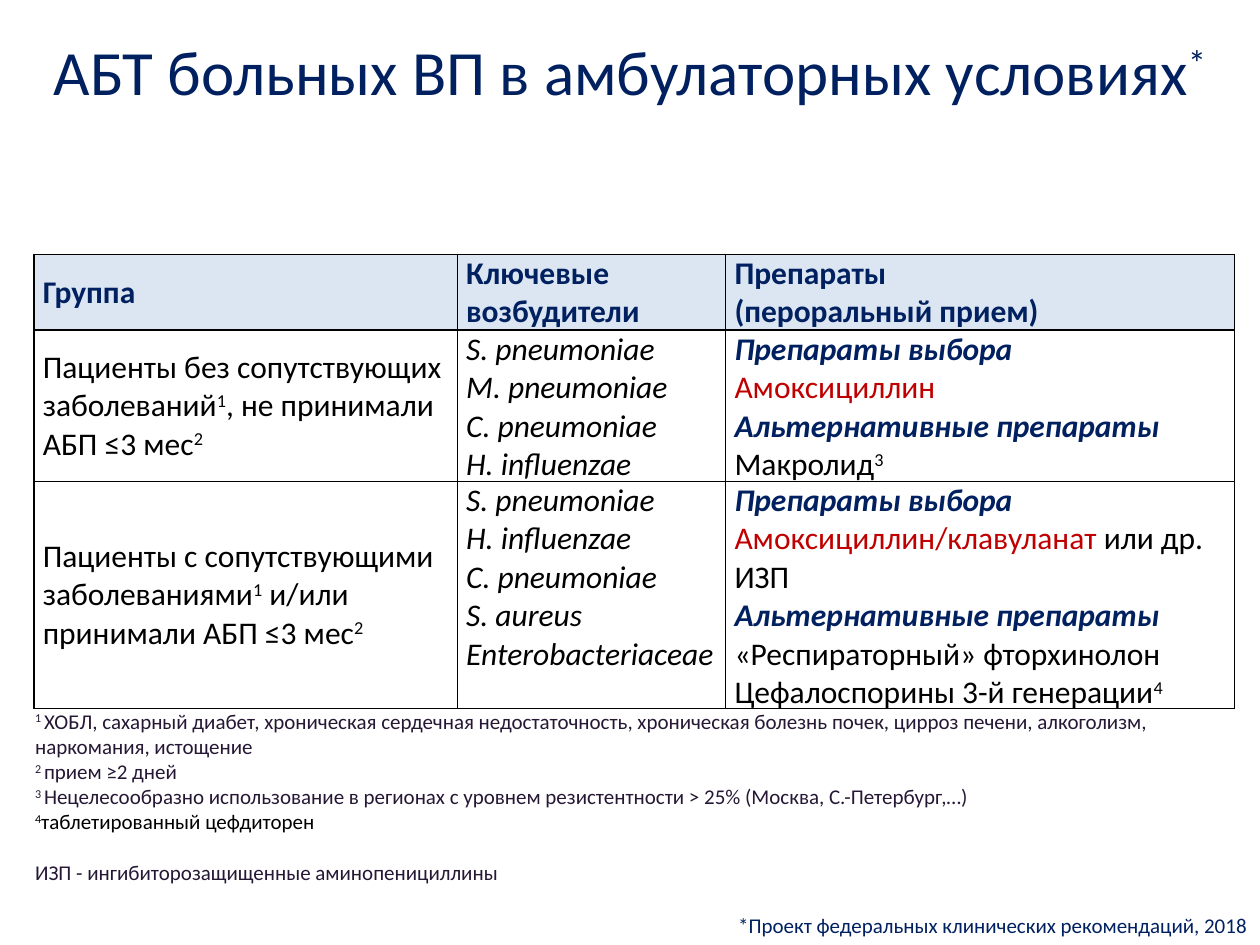
from pptx import Presentation
from pptx.dml.color import RGBColor
from pptx.enum.text import MSO_ANCHOR, MSO_AUTO_SIZE, PP_ALIGN
from pptx.oxml import parse_xml
from pptx.oxml.ns import nsdecls
from pptx.util import Inches, Pt

MIDDLE, TOP = MSO_ANCHOR.MIDDLE, MSO_ANCHOR.TOP
GROW = MSO_AUTO_SIZE.SHAPE_TO_FIT_TEXT
CENTER, RIGHT = PP_ALIGN.CENTER, PP_ALIGN.RIGHT
TITLE_ONLY = 5
COLORS = {"navy": "002060", "black": "000000", "red": "C00000",
          "plum": "261835", "header": "DCE6F2"}
# Style name: color, bold, italic
STYLES = {
    "heading": ("navy", True, False),
    "choice": ("navy", True, True),
    "plain": ("black", False, False),
    "species": ("black", False, True),
    "drug": ("red", False, False),
    "note": ("plum", False, False),
    "title": ("navy", False, False),
}


def write(text_frame, paragraphs, size, alignment=None):
    """Fill a frame with paragraphs of (style, text); ^...^ is superscript, \\n a line break."""
    for index, pieces in enumerate(paragraphs):
        paragraph = text_frame.paragraphs[0] if index == 0 else text_frame.add_paragraph()
        paragraph.alignment = alignment
        for style, text in pieces:
            color, bold, italic = STYLES[style]
            for part, portion in enumerate(text.split("^")):
                for line_number, line in enumerate(portion.split("\n")):
                    if line_number:
                        paragraph.add_line_break()
                    if not line:
                        continue
                    run = paragraph.add_run()
                    run.text = line
                    run.font.name = "Calibri"
                    run.font.size = Pt(size)
                    run.font.bold, run.font.italic = bold, italic
                    run.font.color.rgb = RGBColor.from_string(COLORS[color])
                    if part % 2:
                        run.font._element.set("baseline", "30000")


def add_borders(cell):
    properties = cell._tc.get_or_add_tcPr()
    for side in ("lnL", "lnR", "lnT", "lnB"):
        properties.append(parse_xml(
            f'<a:{side} {nsdecls("a")} w="{Pt(1)}"><a:solidFill>'
            f'<a:srgbClr val="{COLORS["black"]}"/></a:solidFill></a:{side}>'))


presentation = Presentation()
presentation.slide_width, presentation.slide_height = Inches(10), Inches(7.5)
slide = presentation.slides.add_slide(presentation.slide_layouts[TITLE_ONLY])

# Treatment table
column_widths = [3.36, 2.13, 4.04]
row_heights = [0.6, 1.2, 1.8]
rows = [
    [
        [[("heading", "Группа")]],
        [[("heading", "Ключевые возбудители")]],
        [[("heading", "Препараты\n(пероральный прием)")]],
    ],
    [
        [[("plain", "Пациенты без сопутствующих заболеваний^1^, не принимали\nАБП ≤3 мес^2^")]],
        [[("species", name)] for name in
         ("S. pneumoniae", "M. pneumoniae", "C. pneumoniae", "H. influenzae")],
        [[("choice", "Препараты выбора\n"), ("drug", "Амоксициллин")],
         [("choice", "Альтернативные препараты\n"), ("plain", "Макролид^3^")]],
    ],
    [
        [[("plain", "Пациенты с сопутствующими заболеваниями^1^ и/или принимали АБП ≤3 мес^2^")]],
        [[("species", name)] for name in
         ("S. pneumoniae", "H. influenzae", "C. pneumoniae", "S. aureus",
          "Enterobacteriaceae")],
        [[("choice", "Препараты выбора\n"), ("drug", "Амоксициллин/клавуланат"),
          ("plain", " или др. ИЗП\n"), ("choice", "Альтернативные препараты")],
         [("plain", "«Респираторный» фторхинолон")],
         [("plain", "Цефалоспорины 3-й генерации^4^")]],
    ],
]
table = slide.shapes.add_table(
    len(rows), len(column_widths), Inches(0.27), Inches(2.02),
    Inches(sum(column_widths)), Inches(sum(row_heights))).table
table.first_row = table.horz_banding = False
for column, width in zip(table.columns, column_widths):
    column.width = Inches(width)
for row_index, (row, height) in enumerate(zip(rows, row_heights)):
    table.rows[row_index].height = Inches(height)
    for column_index, paragraphs in enumerate(row):
        cell = table.cell(row_index, column_index)
        cell.margin_left = cell.margin_right = Inches(0.07)
        cell.margin_top = cell.margin_bottom = 0
        cell.vertical_anchor = MIDDLE if column_index == 0 else TOP
        add_borders(cell)
        if row_index == 0:
            cell.fill.solid()
            cell.fill.fore_color.rgb = RGBColor.from_string(COLORS["header"])
        else:
            cell.fill.background()
        write(cell.text_frame, paragraphs, 18)

# Footnotes
footnotes = slide.shapes.add_textbox(
    Inches(0.18), Inches(5.57), Inches(9.82), Inches(1.72)).text_frame
footnotes.word_wrap = True
footnotes.auto_size = GROW
write(footnotes, [
    [("note", "^1 ^ХОБЛ, сахарный диабет, хроническая сердечная недостаточность, "
              "хроническая болезнь почек, цирроз печени, алкоголизм, наркомания, истощение")],
    [("note", "^2 ^прием ≥2 дней")],
    [("note", "^3 ^Нецелесообразно использование в регионах с уровнем "
              "резистентности > 25% (Москва, С.-Петербург,…)")],
    [("plain", "^4^таблетированный цефдиторен")],
    [("note", "ИЗП - ингибиторозащищенные аминопенициллины")],
], 12)
footnotes.paragraphs[-1].space_before = Pt(14.6)

# Title
title = slide.shapes.title
title.left, title.top = 0, Inches(0.21)
title.width, title.height = presentation.slide_width, Inches(0.71)
title.text_frame.vertical_anchor = TOP
title.text_frame.auto_size = GROW
write(title.text_frame, [[("title", "АБТ больных ВП в амбулаторных условиях^*^")]], 36, CENTER)

# Reference
reference = slide.shapes.add_textbox(
    Inches(5.7), Inches(7.19), Inches(4.3), Inches(0.3)).text_frame
reference.word_wrap = False
reference.auto_size = GROW
write(reference, [[("title", "*Проект федеральных клинических рекомендаций, 2018")]], 12, RIGHT)

presentation.save("out.pptx")
